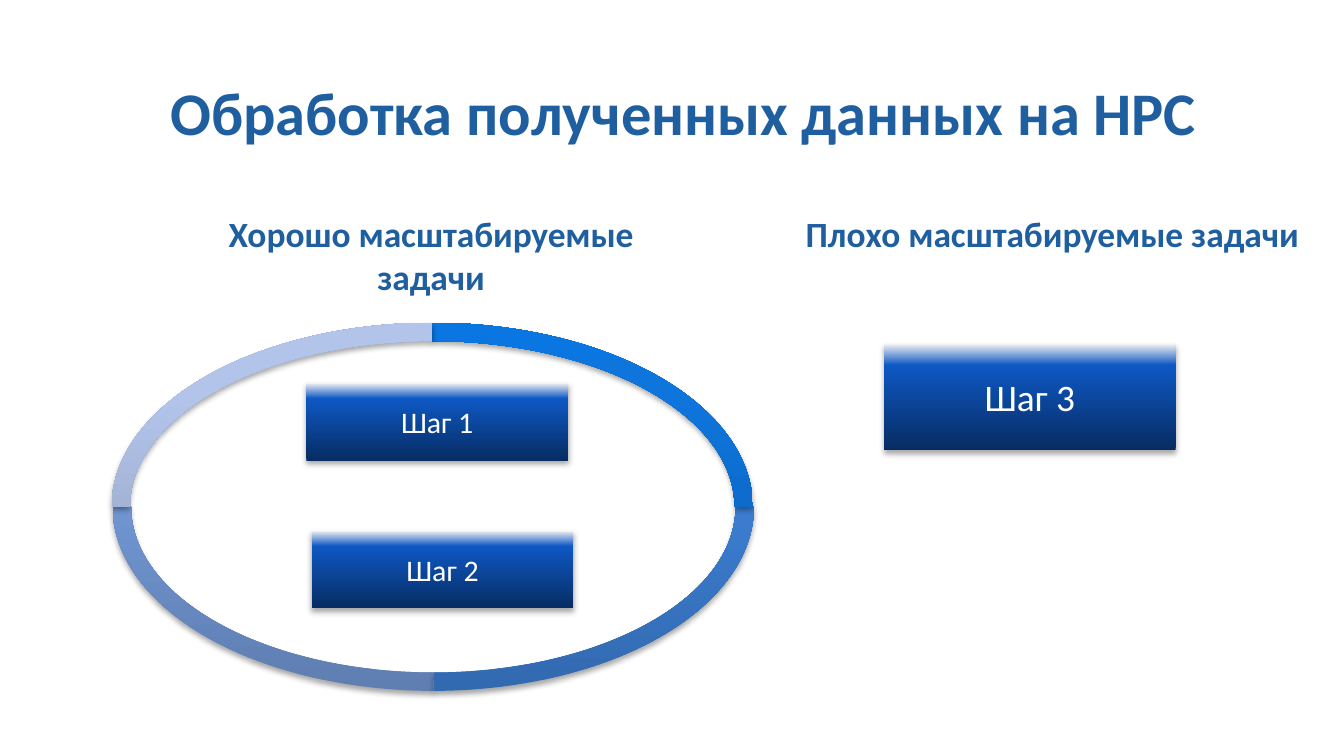
"""Build the slide about processing data on HPC: well and poorly scalable tasks."""
from copy import deepcopy

from lxml.etree import SubElement
from pptx import Presentation
from pptx.dml.color import RGBColor
from pptx.enum.shapes import MSO_SHAPE as Shape
from pptx.enum.text import MSO_ANCHOR as Anchor, MSO_AUTO_SIZE as AutoSize, PP_ALIGN as Align
from pptx.oxml.ns import qn
from pptx.util import Cm, Pt

WHITE = RGBColor(0xFF, 0xFF, 0xFF)
HEADING = RGBColor(0x1F, 0x5F, 0xA0)
STEP_FILL = [RGBColor(0x07, 0x2C, 0x62), RGBColor(0x0E, 0x58, 0xC4), RGBColor(0xF2, 0xF2, 0xF2)]
BOTTOM_LEFT = [RGBColor(0x5F, 0x7E, 0xB1), RGBColor(0x7B, 0xA4, 0xE6), RGBColor(0x7A, 0xA4, 0xEA)]
BOTTOM_RIGHT = [RGBColor(0x32, 0x6A, 0xB0), RGBColor(0x41, 0x89, 0xE5), RGBColor(0x3F, 0x89, 0xE9)]
TOP_RIGHT = [RGBColor(0x0B, 0x5A, 0xAA), RGBColor(0x0E, 0x75, 0xDD), RGBColor(0x0A, 0x76, 0xE2)]
TOP_LEFT = [RGBColor(0x89, 0x97, 0xB4), RGBColor(0xB2, 0xC4, 0xEA), RGBColor(0xB1, 0xC5, 0xEC)]


def style_shape(shape, colors):
    """Give a shape an upward three-stop gradient, no line and a soft shadow."""
    shape.line.fill.background()
    shape.fill.gradient()
    shape.fill.gradient_angle = 90
    stop_list = shape.fill._xPr.find(".//" + qn("a:gsLst"))
    stop_list.append(deepcopy(stop_list[-1]))
    for stop, position, color in zip(shape.fill.gradient_stops, (0, 0.8, 1), colors):
        stop.position = position
        stop.color.rgb = color
    shape.shadow.inherit = False
    effects = shape.fill._xPr.find(qn("a:effectLst"))
    shadow = SubElement(effects, qn("a:outerShdw"), blurRad="40000", dist="23000",
                        dir="5400000", rotWithShape="0")
    shade = SubElement(shadow, qn("a:srgbClr"), val="000000")
    SubElement(shade, qn("a:alpha"), val="35000")


def write_text(frame, text, size, color, bold=False):
    """Write one centred run into a text frame."""
    frame.word_wrap = True
    paragraph = frame.paragraphs[0]
    paragraph.alignment = Align.CENTER
    run = paragraph.add_run()
    run.text = text
    run.font.name = "Calibri"
    run.font.size = Pt(size)
    run.font.bold = bold
    run.font.color.rgb = color


prs = Presentation()
prs.slide_width, prs.slide_height = Cm(25.4), Cm(14.29)
slide = prs.slides.add_slide(prs.slide_layouts[5])
shapes = slide.shapes

title = shapes.title
title.left, title.top, title.width, title.height = Cm(1.07), Cm(1.22), Cm(23.7), Cm(1.7)
title.text_frame.auto_size = AutoSize.NONE
title.text_frame.vertical_anchor = Anchor.BOTTOM
write_text(title.text_frame, "Обработка полученных данных на HPC", 32.4, HEADING, True)

steps = [
    ("Шаг 1", 5.79, 7.24, 4.95, 1.47, 16),
    ("Шаг 2", 5.89, 10.03, 4.95, 1.47, 16),
    ("Шаг 3", 16.71, 6.5, 5.51, 2.01, 20),
]
for label, left, top, width, height, size in steps:
    step = shapes.add_shape(Shape.RECTANGLE, Cm(left), Cm(top), Cm(width), Cm(height))
    style_shape(step, STEP_FILL)
    step.text_frame.vertical_anchor = Anchor.MIDDLE
    write_text(step.text_frame, label, size, WHITE)

QUARTER = 54
cycle = [
    (1, 2.13, BOTTOM_LEFT),
    (0, 2.13, BOTTOM_RIGHT),
    (3, 2.11, TOP_RIGHT),
    (2, 2.11, TOP_LEFT),
]
for quadrant, left, colors in cycle:
    arc = shapes.add_shape(Shape.BLOCK_ARC, Cm(left), Cm(6.1), Cm(12.12), Cm(6.96))
    arc.adjustments[0] = quadrant * QUARTER
    arc.adjustments[1] = (quadrant + 1) % 4 * QUARTER
    arc.adjustments[2] = 0.05
    style_shape(arc, colors)

headings = [
    ("Хорошо масштабируемые задачи", 3.07, 1.88),
    ("Плохо масштабируемые задачи", 14.81, 1.07),
]
for text, left, height in headings:
    heading = shapes.add_textbox(Cm(left), Cm(3.89), Cm(10.16), Cm(height))
    heading.text_frame.auto_size = AutoSize.SHAPE_TO_FIT_TEXT
    write_text(heading.text_frame, text, 19, HEADING, True)

prs.save("out.pptx")
